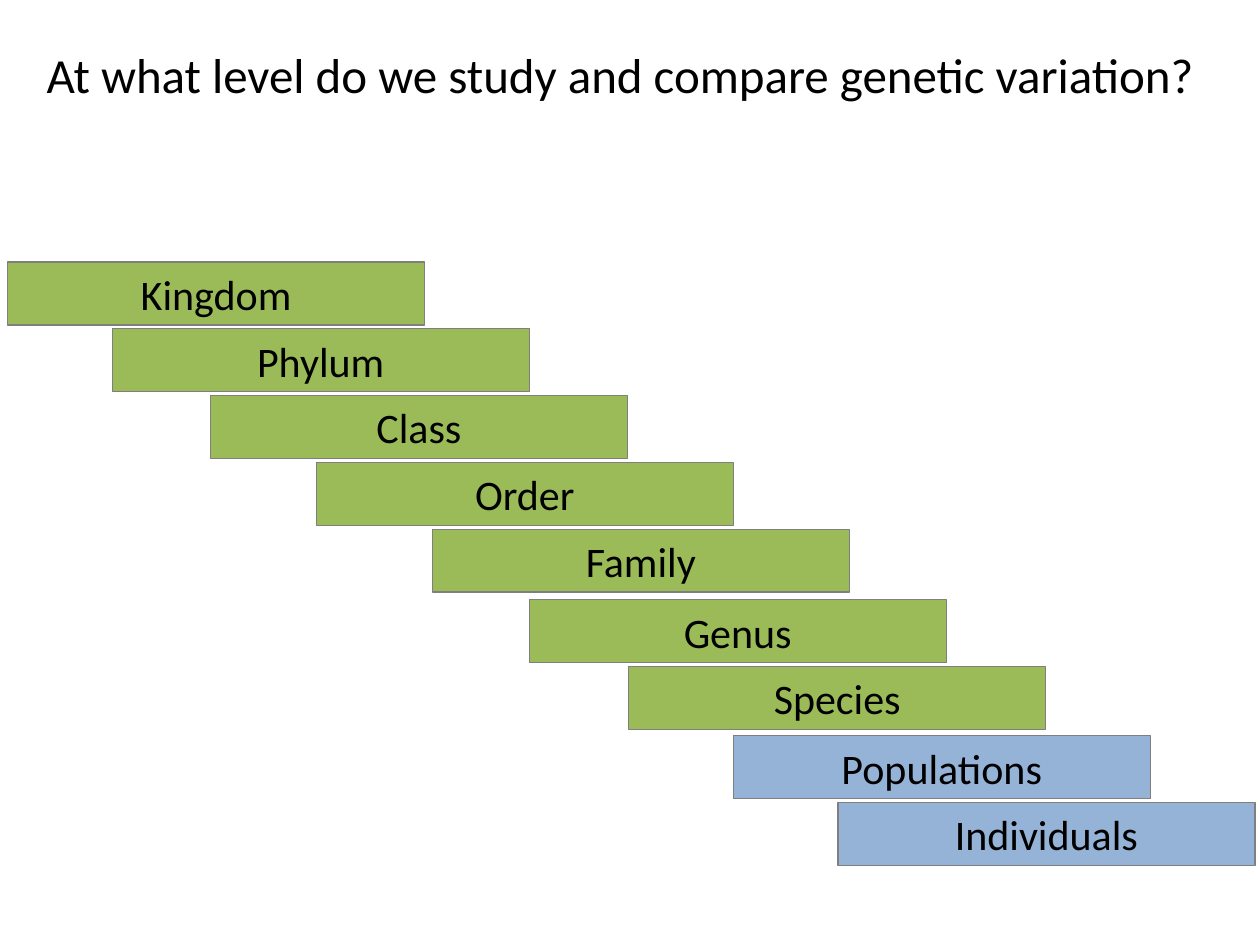
"""Build a slide with a staircase of taxonomic levels."""
import pptx
import pptx.dml.color
import pptx.enum.shapes
import pptx.enum.text
import pptx.util

Pt = pptx.util.Pt
RGB = pptx.dml.color.RGBColor.from_string
ALIGN = pptx.enum.text.PP_ALIGN
MIDDLE = pptx.enum.text.MSO_ANCHOR.MIDDLE
RECT = pptx.enum.shapes.MSO_SHAPE.RECTANGLE

THEME = {
    "font": "Calibri",
    "text": "000000",
    "green": "9BBB59",
    "blue": "95B3D7",
    "line": "7F7F7F",
    "title": 28,
    "label": 24,
}

STEPS = [
    ("Kingdom", 4.3, 149.8, "green"),
    ("Phylum", 64.1, 187.9, "green"),
    ("Class", 120.2, 226.1, "green"),
    ("Order", 180.7, 264.2, "green"),
    ("Family", 247, 302.4, "green"),
    ("Genus", 302.4, 342.7, "green"),
    ("Species", 359.3, 380.9, "green"),
    ("Populations", 419, 420.5, "blue"),
    ("Individuals", 478.8, 458.6, "blue"),
]
WIDTH, HEIGHT = 238.3, 36


def write(shape, text, size, align):
    frame = shape.text_frame
    frame.text = text
    frame.vertical_anchor = MIDDLE
    para = frame.paragraphs[0]
    para.alignment = align
    font = para.runs[0].font
    font.name = THEME["font"]
    font.size = Pt(THEME[size])
    font.color.rgb = RGB(THEME["text"])


deck = pptx.Presentation()
deck.slide_width, deck.slide_height = Pt(720), Pt(540)
slide = deck.slides.add_slide(deck.slide_layouts[5])

title = slide.shapes.title
title.left, title.top = Pt(19.4), Pt(21.6)
title.width, title.height = Pt(681.1), Pt(41)
write(title, "At what level do we study and compare genetic variation?",
      "title", ALIGN.LEFT)
title.text_frame.word_wrap = False
title.text_frame.auto_size = pptx.enum.text.MSO_AUTO_SIZE.NONE

for name, left, top, color in STEPS:
    box = slide.shapes.add_shape(RECT, Pt(left), Pt(top), Pt(WIDTH), Pt(HEIGHT))
    box.shadow.inherit = False
    box.fill.solid()
    box.fill.fore_color.rgb = RGB(THEME[color])
    box.line.color.rgb = RGB(THEME["line"])
    box.line.width = Pt(0.75)
    write(box, name, "label", ALIGN.CENTER)

deck.save("out.pptx")
